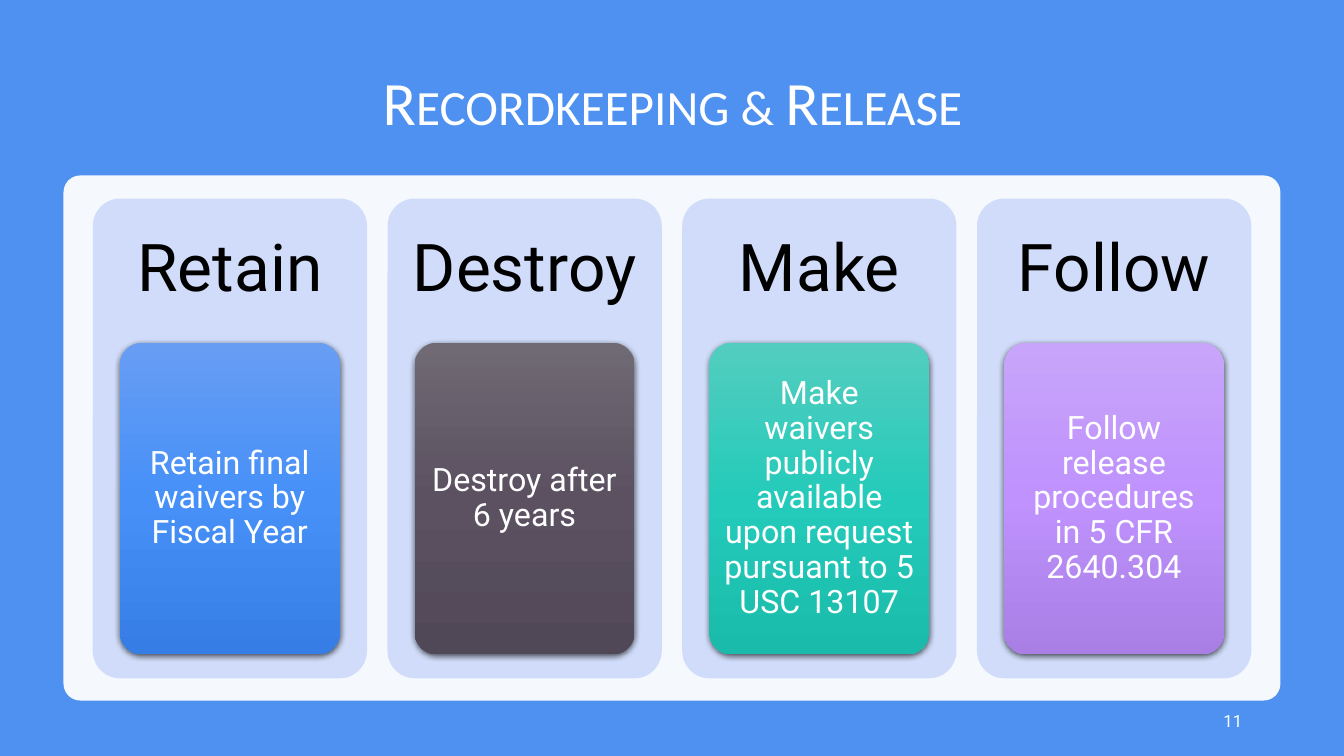
from lxml import etree
from pptx import Presentation
from pptx.dml.color import RGBColor
from pptx.enum.shapes import MSO_SHAPE
from pptx.enum.text import MSO_ANCHOR, PP_ALIGN
from pptx.oxml.ns import qn
from pptx.util import Inches, Pt

ROUNDED = MSO_SHAPE.ROUNDED_RECTANGLE
MIDDLE = MSO_ANCHOR.MIDDLE
CENTER, RIGHT = PP_ALIGN.CENTER, PP_ALIGN.RIGHT

BLUE, WHITE, BLACK, PALE_BLUE = "4E91F0", "FFFFFF", "000000", "D0DCF9"

STEPS = [
    ("Retain", "Retain final waivers by Fiscal Year", ("689DF4", "4690F8", "367EE5")),
    ("Destroy", "Destroy after 6 years", ("706A74", "5B5161", "514857")),
    ("Make", "Make waivers publicly available upon request pursuant to 5 USC 13107",
     ("53CDBF", "24CBBA", "1ABBAB")),
    ("Follow", "Follow release procedures in 5 CFR 2640.304", ("C8A5FA", "BF92FD", "A97EE5")),
]
COLUMN_LEFT, COLUMN_WIDTH = 0.92, 2.72
COLUMN_PITCH = (9.69 - COLUMN_LEFT) / (len(STEPS) - 1)
CARD_INDENT = 0.27

prs = Presentation()
prs.slide_width, prs.slide_height = Inches(13.33), Inches(7.5)
slide = prs.slides.add_slide(prs.slide_layouts[6])
background = slide.background.fill
background.solid()
background.fore_color.rgb = RGBColor.from_string(BLUE)


def add_rounded(left, top, width, height, radius, color):
    shape = slide.shapes.add_shape(ROUNDED, Inches(left), Inches(top), Inches(width), Inches(height))
    shape.adjustments[0] = radius
    shape.shadow.inherit = False
    shape.line.fill.background()
    shape.fill.solid()
    shape.fill.fore_color.rgb = RGBColor.from_string(color)
    return shape


def write(shape, text, size, font, color, align=CENTER, inset=(0.1, 0.05), spacing=0.9):
    """Put one paragraph in the shape; inset is (sides, top and bottom) in inches."""
    frame = shape.text_frame
    frame.word_wrap = True
    frame.vertical_anchor = MIDDLE
    frame.margin_left = frame.margin_right = Inches(inset[0])
    frame.margin_top = frame.margin_bottom = Inches(inset[1])
    paragraph = frame.paragraphs[0]
    paragraph.text = text
    paragraph.alignment = align
    paragraph.line_spacing = spacing
    paragraph.font.size = Pt(size)
    paragraph.font.name = font
    paragraph.font.color.rgb = RGBColor.from_string(color)
    return paragraph


title = slide.shapes.add_textbox(Inches(0.92), Inches(0.5), Inches(11.5), Inches(1.1))
title_line = write(title, "Recordkeeping & Release", 44, "Calibri", WHITE)
title_line.runs[0].font._element.set("cap", "small")

panel = add_rounded(0.63, 1.74, 12.07, 5.21, 0.032, WHITE)
panel_color = panel._element.spPr.find(qn("a:solidFill"))[0]
etree.SubElement(panel_color, qn("a:alpha"), val="95000")

page_number = slide.shapes.add_textbox(Inches(9.42), Inches(6.95), Inches(3), Inches(0.4))
write(page_number, "11", 12, "Roboto", WHITE, align=RIGHT, spacing=1.0)

for index, (heading, detail, shades) in enumerate(STEPS):
    left = COLUMN_LEFT + index * COLUMN_PITCH
    add_rounded(left, 1.97, COLUMN_WIDTH, 4.76, 0.1, PALE_BLUE)

    heading_box = slide.shapes.add_textbox(
        Inches(left), Inches(1.97), Inches(COLUMN_WIDTH), Inches(1.43))
    write(heading_box, heading, 47, "Roboto", BLACK, inset=(0.2, 0.2))

    card = add_rounded(left + CARD_INDENT, 3.4, COLUMN_WIDTH - 2 * CARD_INDENT, 3.09, 0.1, shades[1])
    write(card, detail, 23, "Roboto", WHITE, inset=(0.06, 0.05))

    # Three-stop gradient running from top to bottom
    card.fill.gradient()
    card.fill.gradient_angle = 270
    stops = card._element.spPr.find(qn("a:gradFill")).find(qn("a:gsLst"))
    for old_stop in list(stops):
        stops.remove(old_stop)
    for position, shade in zip((0, 50000, 100000), shades):
        stop = etree.SubElement(stops, qn("a:gs"), pos=str(position))
        etree.SubElement(stop, qn("a:srgbClr"), val=shade)

    # Soft shadow below the card
    effects = card._element.spPr.find(qn("a:effectLst"))
    shadow = etree.SubElement(effects, qn("a:outerShdw"), blurRad=str(Pt(4.5)), dist=str(Pt(1.5)),
                              dir="5400000", algn="ctr", rotWithShape="0")
    shadow_color = etree.SubElement(shadow, qn("a:srgbClr"), val=BLACK)
    etree.SubElement(shadow_color, qn("a:alpha"), val="63000")

prs.save("out.pptx")
